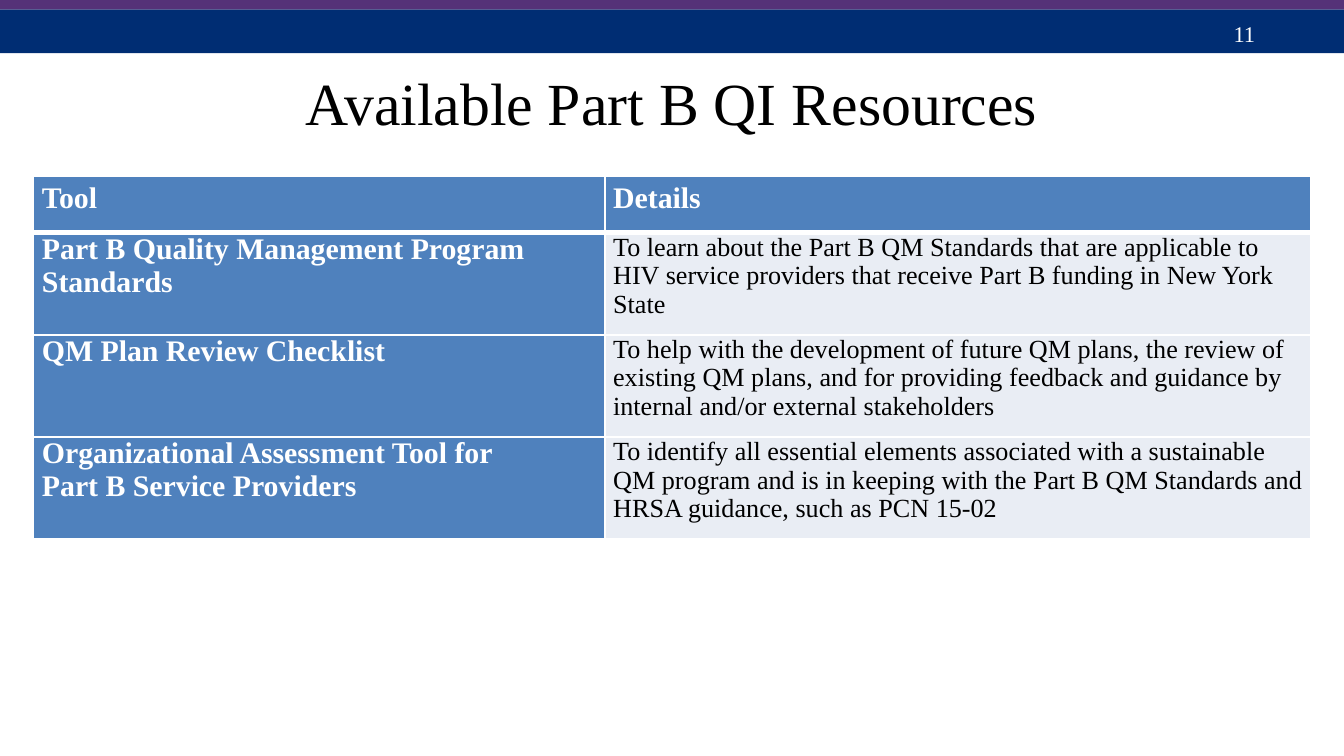
from dataclasses import dataclass

from lxml import etree
from pptx import Presentation
from pptx.dml.color import RGBColor
from pptx.enum.shapes import MSO_SHAPE
from pptx.enum.text import MSO_ANCHOR, MSO_AUTO_SIZE, PP_ALIGN
from pptx.oxml.ns import qn
from pptx.slide import Slide
from pptx.table import _Cell
from pptx.util import Pt

RECTANGLE = MSO_SHAPE.RECTANGLE
MIDDLE = MSO_ANCHOR.MIDDLE
TOP = MSO_ANCHOR.TOP
CENTER = PP_ALIGN.CENTER
LEFT = PP_ALIGN.LEFT
NO_AUTOFIT = MSO_AUTO_SIZE.NONE

FONT = "Times New Roman"
WHITE = "FFFFFF"
BLACK = "000000"
NAVY = "002D73"
PURPLE = "553278"
BLUE = "4F81BD"
PALE = "E9EDF4"
PAGE_WIDTH = 720
COLUMN_WIDTHS = (306, 378)
HEADER_HEIGHT = 30.2
ROW_HEIGHT = 54.7
THIN = 1
THICK = 3


@dataclass(frozen=True)
class Bar:
    top: float
    height: float
    fill: str


@dataclass(frozen=True)
class CellStyle:
    size: float
    color: str
    bold: bool
    fill: str


@dataclass(frozen=True)
class Resource:
    tool: str
    details: str


BARS = (Bar(5, 23.5, NAVY), Bar(-1.5, 6.5, PURPLE))
LABEL = CellStyle(16, WHITE, True, BLUE)
DETAIL = CellStyle(14, BLACK, False, PALE)
RESOURCES = (
    Resource("Tool", "Details"),
    Resource(
        "Part B Quality Management Program Standards",
        "To learn about the Part B QM Standards that are applicable to HIV service "
        "providers that receive Part B funding in New York State",
    ),
    Resource(
        "QM Plan Review Checklist",
        "To help with the development of future QM plans, the review of existing QM "
        "plans, and for providing feedback and guidance by internal and/or external "
        "stakeholders",
    ),
    Resource(
        "Organizational Assessment Tool for\vPart B Service Providers",
        "To identify all essential elements associated with a sustainable QM program "
        "and is in keeping with the Part B QM Standards and HRSA guidance, such as "
        "PCN 15-02",
    ),
)


def rgb(color: str) -> RGBColor:
    return RGBColor.from_string(color)


def place(box, left: float, top: float, width: float, height: float) -> None:
    box.left, box.top = Pt(left), Pt(top)
    box.width, box.height = Pt(width), Pt(height)


def write(frame, text: str, size: float, color: str, bold: bool = False, align=LEFT) -> None:
    frame.word_wrap = True
    frame.text = text
    for para in frame.paragraphs:
        para.alignment = align
        for span in para.runs:
            span.font.name = FONT
            span.font.size = Pt(size)
            span.font.bold = bold
            span.font.color.rgb = rgb(color)


def draw_bar(page: Slide, bar: Bar) -> None:
    box = page.shapes.add_shape(RECTANGLE, 0, Pt(bar.top), Pt(PAGE_WIDTH), Pt(bar.height))
    box.shadow.inherit = False
    box.fill.solid()
    box.fill.fore_color.rgb = rgb(bar.fill)
    box.line.fill.background()


def draw_title(page: Slide, text: str) -> None:
    title = page.shapes.title
    place(title, 90, 28.8, 540, 59.8)
    frame = title.text_frame
    write(frame, text, 32, BLACK, align=CENTER)
    frame.auto_size = NO_AUTOFIT
    frame.vertical_anchor = MIDDLE
    frame.margin_top = Pt(3.6)
    frame.margin_bottom = Pt(11.6)


def draw_page_number(page: Slide, text: str) -> None:
    box = page.shapes.add_textbox(Pt(653.8), Pt(7.2), Pt(54), Pt(21.6))
    write(box.text_frame, text, 12, WHITE)
    box.text_frame.vertical_anchor = MIDDLE


def add_borders(cell: _Cell, top: float, bottom: float) -> None:
    properties = cell._tc.get_or_add_tcPr()
    for side, width in (("L", THIN), ("R", THIN), ("T", top), ("B", bottom)):
        line = etree.SubElement(properties, qn(f"a:ln{side}"), w=str(Pt(width)))
        fill = etree.SubElement(line, qn("a:solidFill"))
        etree.SubElement(fill, qn("a:srgbClr"), val=WHITE)


def fill_cell(cell: _Cell, text: str, style: CellStyle, row: int) -> None:
    add_borders(cell, THICK if row == 1 else THIN, THICK if row == 0 else THIN)
    cell.fill.solid()
    cell.fill.fore_color.rgb = rgb(style.fill)
    cell.margin_left = Pt(4.5)
    cell.margin_right = cell.margin_top = cell.margin_bottom = 0
    cell.vertical_anchor = MIDDLE if row == 0 else TOP
    write(cell.text_frame, text, style.size, style.color, style.bold)
    if row == 0:
        cell.text_frame.paragraphs[0].line_spacing = Pt(11.2)


def draw_resources(page: Slide) -> None:
    heights = [HEADER_HEIGHT] + [ROW_HEIGHT] * (len(RESOURCES) - 1)
    frame = page.shapes.add_table(
        len(RESOURCES), len(COLUMN_WIDTHS), Pt(18), Pt(94.5),
        Pt(sum(COLUMN_WIDTHS)), Pt(sum(heights)),
    )
    table = frame.table
    table.first_row = False
    table.horz_banding = False
    for column, width in zip(table.columns, COLUMN_WIDTHS):
        column.width = Pt(width)
    for row, (resource, height) in enumerate(zip(RESOURCES, heights)):
        table.rows[row].height = Pt(height)
        fill_cell(table.cell(row, 0), resource.tool, LABEL, row)
        fill_cell(table.cell(row, 1), resource.details, DETAIL if row else LABEL, row)


def main() -> None:
    deck = Presentation()
    deck.slide_width, deck.slide_height = Pt(PAGE_WIDTH), Pt(405)
    page = deck.slides.add_slide(deck.slide_layouts[5])
    for bar in BARS:
        draw_bar(page, bar)
    draw_page_number(page, "11")
    draw_title(page, "Available Part B QI Resources")
    draw_resources(page)
    deck.save("out.pptx")


if __name__ == "__main__":
    main()
